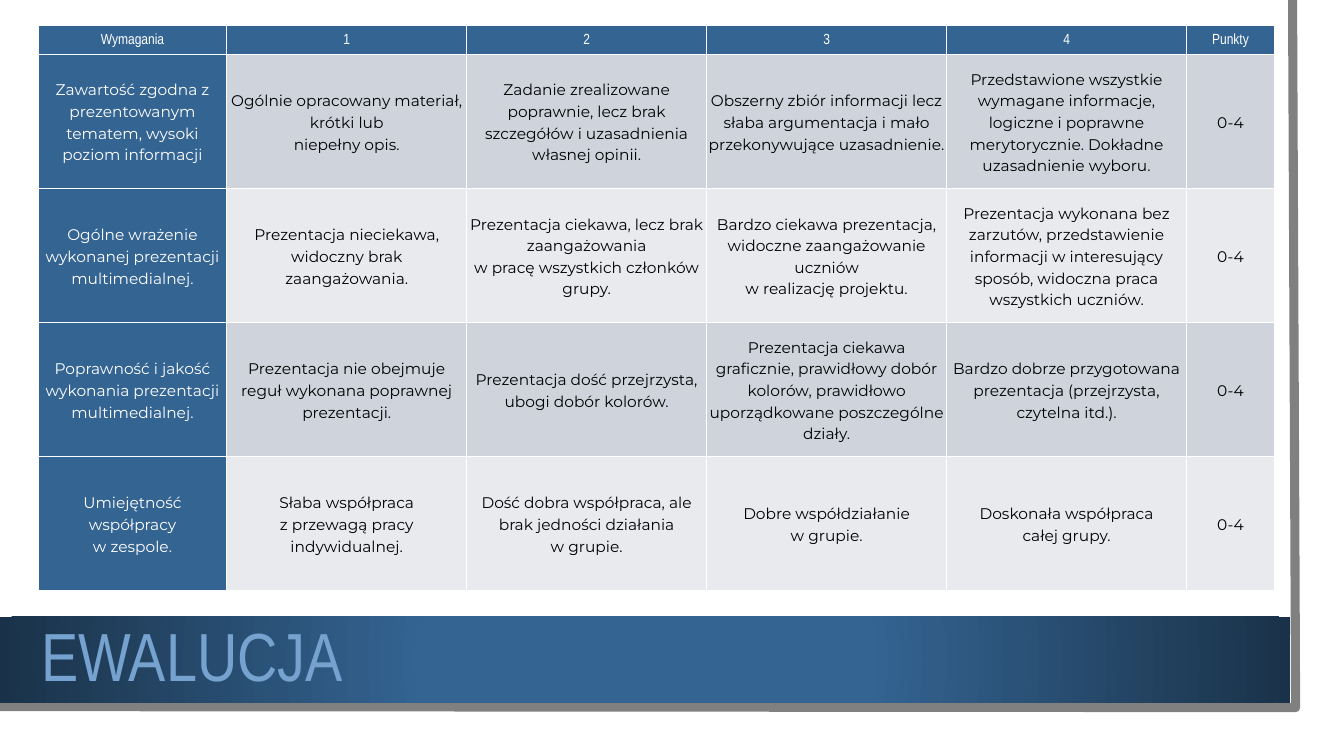
from copy import deepcopy

from lxml import etree
from pptx import Presentation
from pptx.dml.color import RGBColor
from pptx.enum.shapes import MSO_SHAPE
from pptx.enum.text import MSO_ANCHOR, PP_ALIGN
from pptx.oxml import parse_xml
from pptx.oxml.ns import nsdecls, qn
from pptx.util import Pt

PX = 9144  # EMU per px, 100 px to the inch
RECTANGLE = MSO_SHAPE.RECTANGLE
MIDDLE = MSO_ANCHOR.MIDDLE
LEFT, CENTER = PP_ALIGN.LEFT, PP_ALIGN.CENTER
NARROW, BODY = "Arial Narrow", "Montserrat"
COLORS = {
    "white": "FFFFFF", "black": "000000", "grey": "808080",
    "blue": "346492", "navy": "1A3249", "title": "75A2CE",
    "dark_band": "CED3DC", "light_band": "E8EAEE",
}

COLUMN_WIDTHS = [187, 238, 238, 238, 238, 87]
HEADER_HEIGHT, ROW_HEIGHT = 29, 133
HEADER = ["Wymagania", "1", "2", "3", "4", "Punkty"]
POINTS = "0-4"
CRITERIA = [
    ["Zawartość zgodna z prezentowanym tematem, wysoki poziom informacji",
     "Ogólnie opracowany materiał, krótki lub\nniepełny opis.",
     "Zadanie zrealizowane poprawnie, lecz brak szczegółów i uzasadnienia własnej opinii.",
     "Obszerny zbiór informacji lecz słaba argumentacja i mało przekonywujące uzasadnienie.",
     "Przedstawione wszystkie wymagane informacje, logiczne i poprawne merytorycznie. "
     "Dokładne uzasadnienie wyboru."],
    ["Ogólne wrażenie wykonanej prezentacji\nmultimedialnej.",
     "Prezentacja nieciekawa, widoczny brak zaangażowania.",
     "Prezentacja ciekawa, lecz brak zaangażowania\nw pracę wszystkich członków grupy.",
     "Bardzo ciekawa prezentacja, widoczne zaangażowanie uczniów\nw realizację projektu.",
     "Prezentacja wykonana bez zarzutów, przedstawienie informacji w interesujący sposób, "
     "widoczna praca wszystkich uczniów."],
    ["Poprawność i jakość wykonania prezentacji\nmultimedialnej.",
     "Prezentacja nie obejmuje reguł wykonana poprawnej prezentacji.",
     "Prezentacja dość przejrzysta, ubogi dobór kolorów.",
     "Prezentacja ciekawa graficznie, prawidłowy dobór kolorów, prawidłowo "
     "uporządkowane poszczególne działy.",
     "Bardzo dobrze przygotowana prezentacja (przejrzysta, czytelna itd.)."],
    ["Umiejętność współpracy\nw zespole.",
     "Słaba współpraca\nz przewagą pracy indywidualnej.",
     "Dość dobra współpraca, ale brak jedności działania\nw grupie.",
     "Dobre współdziałanie\nw grupie.",
     "Doskonała współpraca\ncałej grupy."],
]


def rgb(name):
    return RGBColor.from_string(COLORS[name])


def box(*lengths):
    return [length * PX for length in lengths]


def write(text_frame, text, font=BODY, size=11, color="black", align=CENTER, spacing=1.15):
    text_frame.word_wrap = True
    paragraph = text_frame.paragraphs[0]
    paragraph.text = text
    paragraph.alignment = align
    paragraph.line_spacing = spacing
    for run in paragraph.runs:
        run.font.name = font
        run.font.size = Pt(size)
        run.font.color.rgb = rgb(color)
    # Line breaks take the size of the text around them
    for line_break in paragraph._p.findall(qn("a:br")):
        line_break.insert(0, deepcopy(paragraph.runs[0]._r.rPr))


def add_rectangle(slide, left, top, width, height, color):
    shape = slide.shapes.add_shape(RECTANGLE, *box(left, top, width, height))
    shape.shadow.inherit = False
    shape.fill.solid()
    shape.fill.fore_color.rgb = rgb(color)
    shape.line.fill.background()
    return shape


def set_radial_gradient(shape, inner, outer, start):
    properties = shape._element.spPr
    solid = properties.find(qn("a:solidFill"))
    properties.replace(solid, parse_xml(
        f'<a:gradFill rotWithShape="1" {nsdecls("a")}><a:gsLst>'
        f'<a:gs pos="{start * 1000}"><a:srgbClr val="{COLORS[inner]}"/></a:gs>'
        f'<a:gs pos="100000"><a:srgbClr val="{COLORS[outer]}"/></a:gs></a:gsLst>'
        '<a:path path="circle"><a:fillToRect l="50000" t="50000" r="50000" b="50000"/>'
        '</a:path></a:gradFill>'))


def add_edge(slide, points, color, width):
    builder = slide.shapes.build_freeform(*points[0], scale=PX)
    builder.add_line_segments(points[1:], close=False)
    shape = builder.convert_to_shape()
    shape.shadow.inherit = False
    shape.fill.background()
    shape.line.color.rgb = rgb(color)
    shape.line.width = Pt(width)


def add_title(slide, text, left, top, width, height):
    text_frame = slide.shapes.add_textbox(*box(left, top, width, height)).text_frame
    text_frame.vertical_anchor = MIDDLE
    write(text_frame, text, font=NARROW, size=48.6, color="title", align=LEFT, spacing=0.9)


def set_borders(cell, color, width):
    properties = cell._tc.get_or_add_tcPr()
    for index, side in enumerate(("lnL", "lnR", "lnT", "lnB")):
        line = etree.Element(qn(f"a:{side}"), w=str(Pt(width)))
        fill = etree.SubElement(line, qn("a:solidFill"))
        etree.SubElement(fill, qn("a:srgbClr"), val=COLORS[color])
        properties.insert(index, line)


def fill_cell(cell, text, fill, **text_format):
    cell.margin_left = cell.margin_right = cell.margin_top = cell.margin_bottom = PX
    cell.vertical_anchor = MIDDLE
    cell.fill.solid()
    cell.fill.fore_color.rgb = rgb(fill)
    set_borders(cell, "white", 1)
    write(cell.text_frame, text, **text_format)


def add_rubric(slide, left, top):
    heights = [HEADER_HEIGHT] + [ROW_HEIGHT] * len(CRITERIA)
    frame = slide.shapes.add_table(
        len(heights), len(COLUMN_WIDTHS),
        *box(left, top, sum(COLUMN_WIDTHS), sum(heights)))
    table = frame.table
    table.first_row = table.horz_banding = False
    for column, width in zip(table.columns, COLUMN_WIDTHS):
        column.width = width * PX
    for row, height in zip(table.rows, heights):
        row.height = height * PX

    # Header row
    for index, text in enumerate(HEADER):
        fill_cell(table.cell(0, index), text, "blue", font=NARROW, size=10.5, color="white")

    # Criteria rows in alternating bands
    for row, texts in enumerate(CRITERIA, start=1):
        band = "dark_band" if row % 2 else "light_band"
        for index, text in enumerate(texts + [POINTS]):
            is_label = index == 0
            fill_cell(table.cell(row, index), text, "blue" if is_label else band,
                      color="white" if is_label else "black")


def main():
    presentation = Presentation()
    presentation.slide_width, presentation.slide_height = box(1333, 750)
    slide = presentation.slides.add_slide(presentation.slide_layouts[6])

    # Sheet with its grey edge
    add_rectangle(slide, 0, 0, 1310, 727, "white")
    add_edge(slide, [(1282, 0), (1285, 702), (-3, 701)], "grey", 6.5)

    # Title band
    band = add_rectangle(slide, 0, 612, 1280, 85, "blue")
    set_radial_gradient(band, "blue", "navy", 34)
    add_title(slide, "EWALUCJA", 31, 611, 1136, 86)

    # Grading table
    add_rubric(slide, 38, 25)
    presentation.save("out.pptx")


if __name__ == "__main__":
    main()
